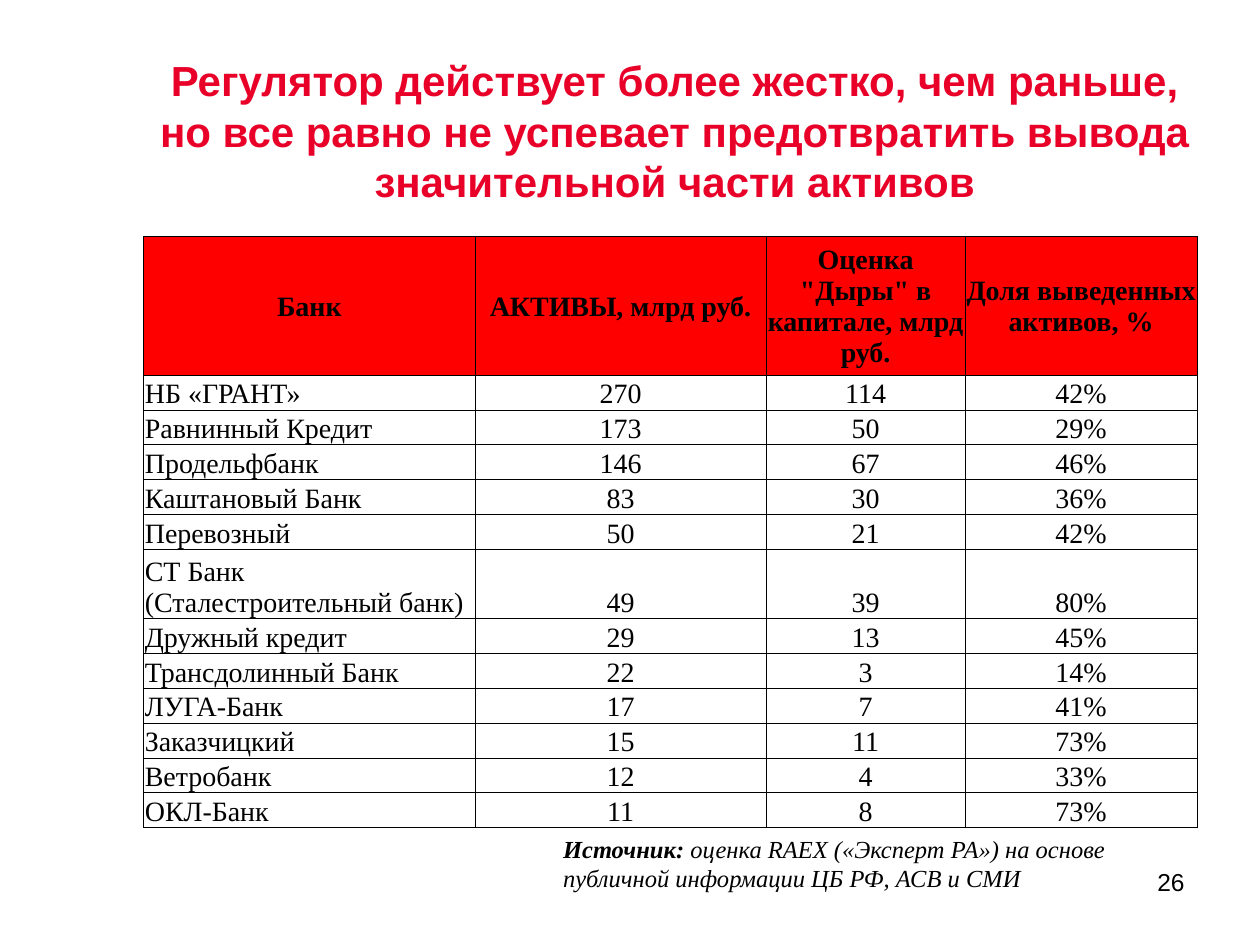
from lxml.etree import SubElement
from pptx import Presentation
from pptx.dml.color import RGBColor
from pptx.enum.text import MSO_ANCHOR, PP_ALIGN
from pptx.oxml.ns import qn
from pptx.util import Inches, Pt

BLACK = RGBColor(0x00, 0x00, 0x00)
RED = RGBColor(0xFF, 0x00, 0x00)
CRIMSON = RGBColor(0xE9, 0x00, 0x29)
SANS, SERIF = "Arial", "Times New Roman"

HEADERS = ["Банк", "АКТИВЫ, млрд руб.", 'Оценка "Дыры" в капитале, млрд руб.',
           "Доля выведенных активов, %"]
BANKS = [
    ("НБ «ГРАНТ»", 270, 114, "42%"),
    ("Равнинный Кредит", 173, 50, "29%"),
    ("Продельфбанк", 146, 67, "46%"),
    ("Каштановый Банк", 83, 30, "36%"),
    ("Перевозный", 50, 21, "42%"),
    ("СТ Банк (Сталестроительный банк)", 49, 39, "80%"),
    ("Дружный кредит", 29, 13, "45%"),
    ("Трансдолинный Банк", 22, 3, "14%"),
    ("ЛУГА-Банк", 17, 7, "41%"),
    ("Заказчицкий", 15, 11, "73%"),
    ("Ветробанк", 12, 4, "33%"),
    ("ОКЛ-Банк", 11, 8, "73%"),
]
COL_WIDTHS = [2.63, 2.31, 1.58, 1.84]
LINES_PER_ROW = [4] + [2 if len(bank[0]) > 30 else 1 for bank in BANKS]
TABLE_HEIGHT = 4.66


class SlideBuilder:
    def __init__(self, slide):
        self.slide = slide

    def style(self, p, font, size, color=BLACK, bold=False, italic=False,
              align=PP_ALIGN.LEFT):
        p.alignment = align
        f = p.font
        f.name, f.size, f.bold, f.italic = font, Pt(size), bold, italic
        f.color.rgb = color

    def text(self, box, paragraphs, font, size, anchor=MSO_ANCHOR.TOP, **style):
        """Each paragraph is a list of (text, bold) runs; None inherits."""
        sp = self.slide.shapes.add_textbox(*map(Inches, box))
        tf = sp.text_frame
        tf.word_wrap = True
        tf.vertical_anchor = anchor
        for i, runs in enumerate(paragraphs):
            p = tf.add_paragraph() if i else tf.paragraphs[0]
            self.style(p, font, size, **style)
            for content, bold in runs:
                r = p.add_run()
                r.text = content
                r.font.bold = bold

    def borders(self, cell):
        tc_pr = cell._tc.get_or_add_tcPr()
        for i, side in enumerate(("lnL", "lnR", "lnT", "lnB")):
            ln = tc_pr.makeelement(qn(f"a:{side}"), {"w": str(Pt(0.5))})
            fill = SubElement(ln, qn("a:solidFill"))
            SubElement(fill, qn("a:srgbClr"), val=str(BLACK))
            tc_pr.insert(i, ln)

    def cell(self, cell, content, header, align):
        cell.margin_left = cell.margin_right = cell.margin_top = Inches(0.01)
        cell.margin_bottom = 0
        cell.vertical_anchor = MSO_ANCHOR.MIDDLE if header else MSO_ANCHOR.BOTTOM
        if header:
            cell.fill.solid()
            cell.fill.fore_color.rgb = RED
        else:
            cell.fill.background()
        self.borders(cell)
        p = cell.text_frame.paragraphs[0]
        self.style(p, SERIF, 16, bold=header, align=align)
        p.add_run().text = str(content)

    def table(self, left, top, rows):
        frame = self.slide.shapes.add_table(
            len(rows), len(COL_WIDTHS), Inches(left), Inches(top),
            Inches(sum(COL_WIDTHS)), Inches(TABLE_HEIGHT))
        table = frame.table
        for column, width in zip(table.columns, COL_WIDTHS):
            column.width = Inches(width)
        line = TABLE_HEIGHT / sum(LINES_PER_ROW)
        for i, values in enumerate(rows):
            table.rows[i].height = Inches(line * LINES_PER_ROW[i])
            for j, value in enumerate(values):
                left_aligned = i > 0 and j == 0
                self.cell(table.cell(i, j), value, i == 0,
                          PP_ALIGN.LEFT if left_aligned else PP_ALIGN.CENTER)


def main():
    prs = Presentation()
    prs.slide_width, prs.slide_height = Inches(10), Inches(7.5)
    s = SlideBuilder(prs.slides.add_slide(prs.slide_layouts[6]))

    # Title
    s.text((1.14, 0.68, 8.43, 0.71),
           [[("Регулятор действует более жестко, чем раньше, но все равно "
              "не успевает предотвратить вывода значительной части активов", None)]],
           SANS, 24, MSO_ANCHOR.MIDDLE, color=CRIMSON, bold=True,
           align=PP_ALIGN.CENTER)

    # Page number
    s.text((7.17, 6.83, 2.33, 0.52), [[("26", None)]], SANS, 14,
           align=PP_ALIGN.RIGHT)

    # Source note
    s.text((4.37, 6.57, 7.72, 0.57),
           [[("Источник: ", True), ("оценка RAEX («Эксперт РА») на основе", None)],
            [("публичной информации ЦБ РФ, АСВ и СМИ", None)]],
           SERIF, 14, italic=True)

    # Bank table
    s.table(1.14, 1.88, [HEADERS] + BANKS)

    prs.save("out.pptx")


if __name__ == "__main__":
    main()
